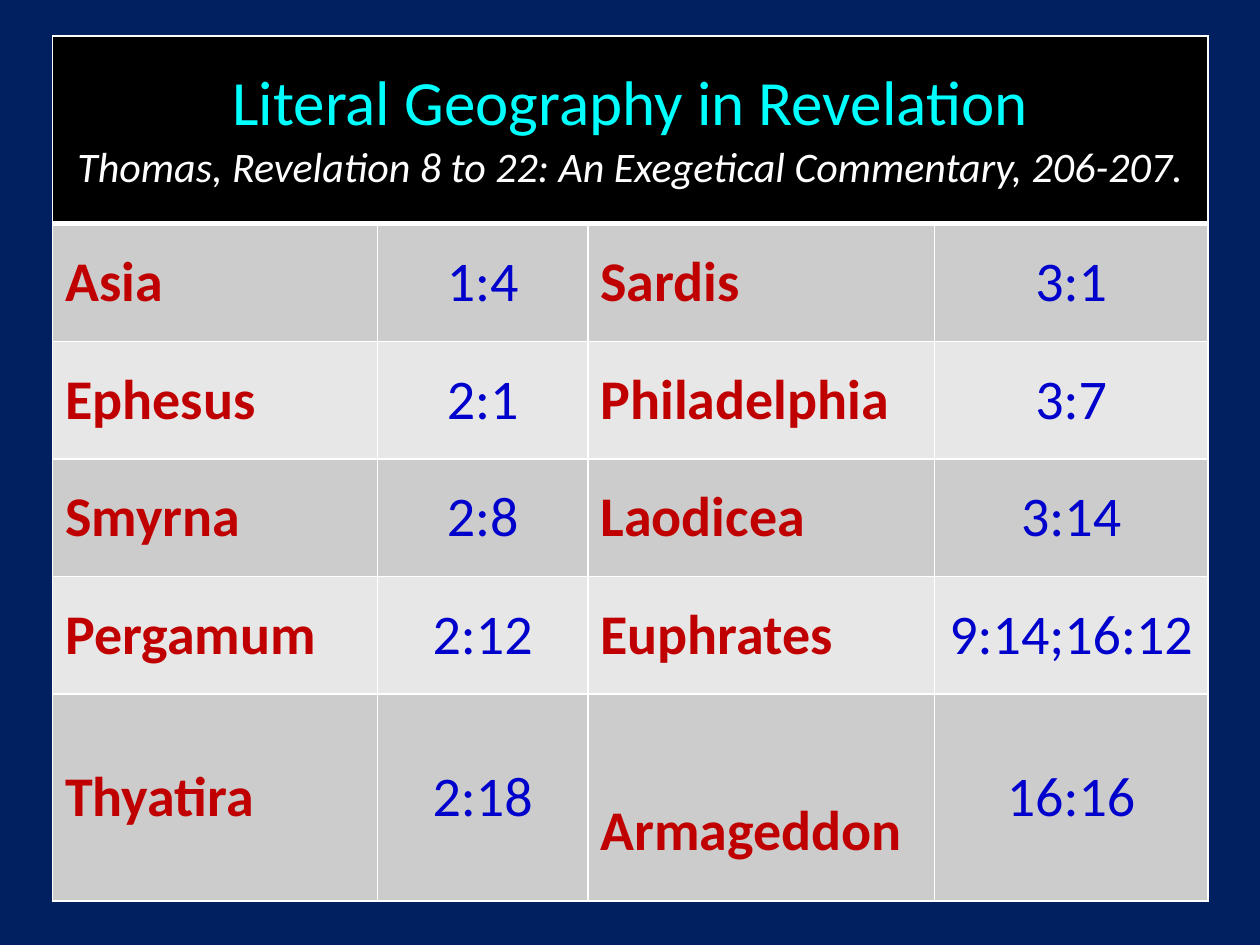
"""Build a slide with a table of the literal places named in Revelation."""
import pptx
import pptx.dml.color
import pptx.enum.text
import pptx.oxml
import pptx.oxml.ns
import pptx.util

Cm = pptx.util.Cm
ALIGN = pptx.enum.text.PP_ALIGN

HEADING = [
    ("Literal Geography in Revelation",
     {"size": 36, "color": "00FFFF", "bold": False, "italic": False}),
    ("Thomas, Revelation 8 to 22: An Exegetical Commentary, 206-207.",
     {"size": 24, "color": "FFFFFF", "bold": False, "italic": True}),
]
PLACES = [
    ("Asia", "1:4", "Sardis", "3:1"),
    ("Ephesus", "2:1", "Philadelphia", "3:7"),
    ("Smyrna", "2:8", "Laodicea", "3:14"),
    ("Pergamum", "2:12", "Euphrates", "9:14;16:12"),
    ("Thyatira", "2:18", "Armageddon", "16:16"),
]
PLACE_FORMAT = {"size": 32, "color": "C00000", "bold": True}
VERSE_FORMAT = {"size": 32, "color": "0000CC", "bold": False}
COLUMN_WIDTHS = [6.55, 4.24, 6.99, 5.51]
ROW_HEIGHTS = [3.78] + [2.37] * 4 + [4.17]
BAND_FILLS = ["CCCCCC", "E7E7E7"]
LEFT, TOP = 1.06, 0.73


def rgb(value):
    return pptx.dml.color.RGBColor.from_string(value)


def write(paragraph, text, alignment, formats):
    paragraph.alignment = alignment
    run = paragraph.add_run()
    run.text = text
    values = {"name": "Calibri", **formats}
    run.font.color.rgb = rgb(values.pop("color"))
    values["size"] = pptx.util.Pt(values["size"])
    for name, value in values.items():
        setattr(run.font, name, value)


def style_cell(cell, fill, top=1, bottom=1):
    cell.vertical_anchor = pptx.enum.text.MSO_ANCHOR.MIDDLE
    properties = cell._tc.get_or_add_tcPr()
    for side, points in {"L": 1, "R": 1, "T": top, "B": bottom}.items():
        properties.append(pptx.oxml.parse_xml(
            f'<a:ln{side} {pptx.oxml.ns.nsdecls("a")} w="{points * 12700}">'
            f'<a:solidFill><a:srgbClr val="FFFFFF"/></a:solidFill></a:ln{side}>'))
    cell.fill.solid()
    cell.fill.fore_color.rgb = rgb(fill)


def add_places_table(slide):
    table = slide.shapes.add_table(
        len(ROW_HEIGHTS), len(COLUMN_WIDTHS), Cm(LEFT), Cm(TOP),
        Cm(sum(COLUMN_WIDTHS)), Cm(sum(ROW_HEIGHTS))).table
    for column, width in zip(table.columns, COLUMN_WIDTHS):
        column.width = Cm(width)
    for row, height in zip(table.rows, ROW_HEIGHTS):
        row.height = Cm(height)

    for cell in table.rows[0].cells:
        style_cell(cell, "000000", bottom=3)
    heading = table.cell(0, 0)
    heading.merge(table.cell(0, len(COLUMN_WIDTHS) - 1))
    for index, (text, formats) in enumerate(HEADING):
        frame = heading.text_frame
        paragraph = frame.add_paragraph() if index else frame.paragraphs[0]
        write(paragraph, text, ALIGN.CENTER, formats)

    for row, texts in enumerate(PLACES, start=1):
        for column, text in enumerate(texts):
            cell = table.cell(row, column)
            style_cell(cell, BAND_FILLS[(row - 1) % 2], top=3 if row == 1 else 1)
            is_verse = column % 2
            write(cell.text_frame.paragraphs[0], text,
                  ALIGN.CENTER if is_verse else ALIGN.LEFT,
                  VERSE_FORMAT if is_verse else PLACE_FORMAT)
    table.cell(len(PLACES), 2).margin_top = Cm(1.5)


def main():
    presentation = pptx.Presentation()
    presentation.slide_width, presentation.slide_height = Cm(25.4), Cm(19.05)
    slide = presentation.slides.add_slide(presentation.slide_layouts[6])
    slide.background.fill.solid()
    slide.background.fill.fore_color.rgb = rgb("002060")
    add_places_table(slide)
    presentation.save("out.pptx")


if __name__ == "__main__":
    main()
